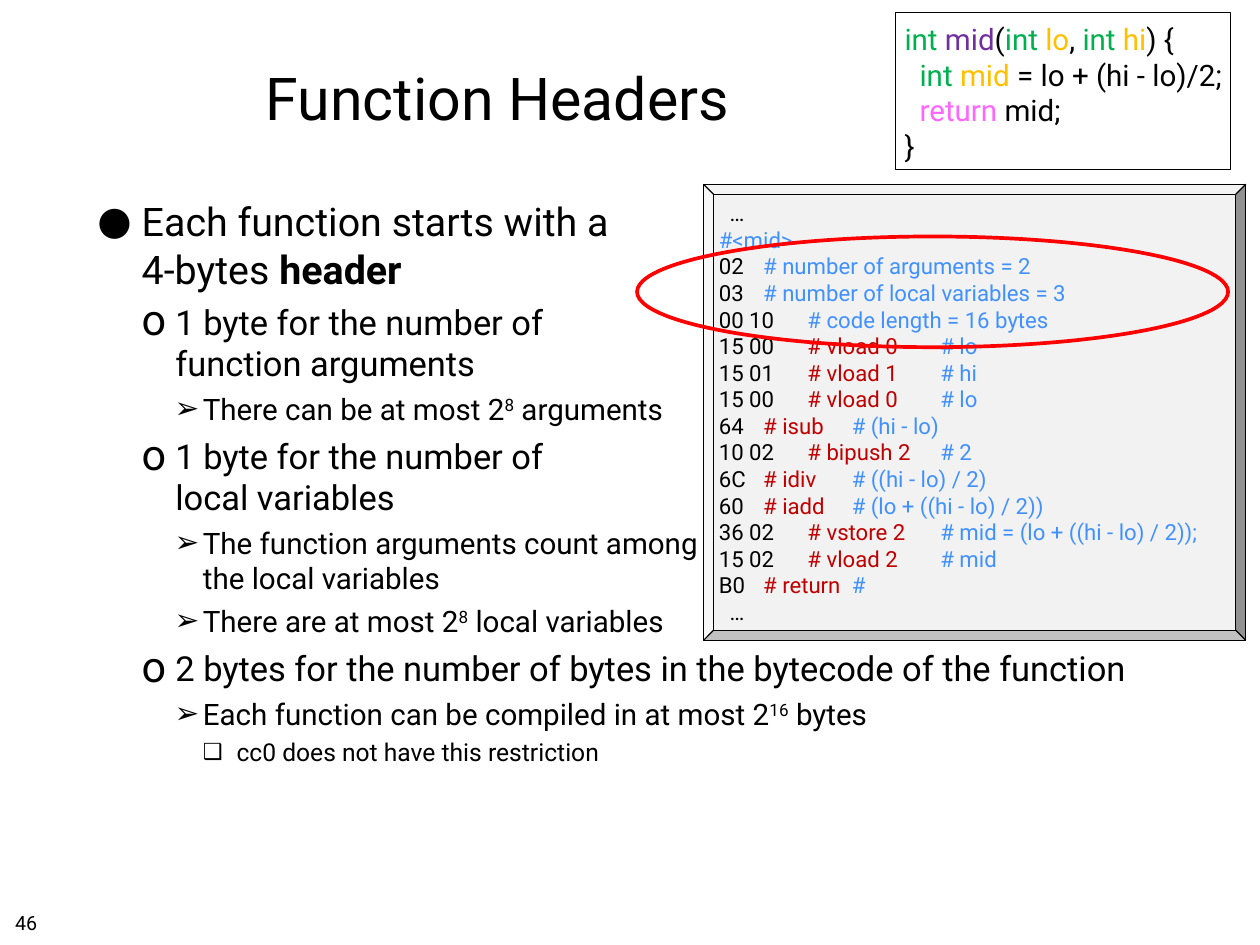
"""Builds the slide on function headers in bytecode."""
from lxml.etree import SubElement
from pptx import Presentation
from pptx.dml.color import RGBColor
from pptx.enum.shapes import MSO_SHAPE as SHAPE
from pptx.enum.text import MSO_ANCHOR as ANCHOR, MSO_AUTO_SIZE as FIT, PP_ALIGN as ALIGN
from pptx.oxml.ns import qn
from pptx.util import Inches, Pt

BLACK = RGBColor(0x00, 0x00, 0x00)
GREY = RGBColor(0xF2, 0xF2, 0xF2)
RED = RGBColor(0xFF, 0x00, 0x00)
BLUE = RGBColor(0x40, 0x91, 0xFF)
MAROON = RGBColor(0xC0, 0x00, 0x00)
GREEN = RGBColor(0x00, 0xB0, 0x50)
PURPLE = RGBColor(0x70, 0x30, 0xA0)
GOLD = RGBColor(0xFF, 0xC0, 0x00)
PINK = RGBColor(0xFF, 0x66, 0xFF)

FONT = "Roboto"
PAD = 0.06
TITLE = "Function Headers"
NUMBER = "46"

# left, hang, space before, size, bullet, bullet percent
LEVELS = [
    (0.5, 0.5, 8, 32, "●", 100),
    (0.88, 0.38, 7, 28, "o", 125),
    (1.19, 0.32, 6, 24, "➢", 100),
    (1.57, 0.38, 4.8, 20, "❑", 90),
]
POINTS = [
    (0, "Each function starts with a\n4-bytes ", "header", ""),
    (1, "1 byte for the number of\nfunction arguments", "", ""),
    (2, "There can be at most 2", "8", " arguments"),
    (1, "1 byte for the number of\nlocal variables", "", ""),
    (2, "The function arguments count among\nthe local variables", "", ""),
    (2, "There are at most 2", "8", " local variables"),
    (1, "2 bytes for the number of bytes in the bytecode of the function", "", ""),
    (2, "Each function can be compiled in at most 2", "16", " bytes"),
    (3, "cc0 does not have this restriction", "", ""),
]
HEADER = [
    ("02", "# number of arguments = 2"),
    ("03", "# number of local variables = 3"),
    ("00 10", "# code length = 16 bytes"),
]
CODE = [
    ("15 00", "# vload 0", "# lo"),
    ("15 01", "# vload 1", "# hi"),
    ("15 00", "# vload 0", "# lo"),
    ("64", "# isub", "# (hi - lo)"),
    ("10 02", "# bipush 2", "# 2"),
    ("6C", "# idiv", "# ((hi - lo) / 2)"),
    ("60", "# iadd", "# (lo + ((hi - lo) / 2))"),
    ("36 02", "# vstore 2", "# mid = (lo + ((hi - lo) / 2));"),
    ("15 02", "# vload 2", "# mid"),
    ("B0", "# return", "#"),
]
SOURCE = [
    (0, [("int ", GREEN), ("mid", PURPLE), ("(", BLACK), ("int ", GREEN), ("lo", GOLD),
         (", ", BLACK), ("int ", GREEN), ("hi", GOLD), (") {", BLACK)]),
    (0.17, [("int ", GREEN), ("mid", GOLD), (" = lo + (hi - lo)/2;", BLACK)]),
    (0.17, [("return ", PINK), ("mid;", BLACK)]),
    (0, [("}", BLACK)]),
]


def set_up(shape, pad=PAD, wrap=True, anchor=ANCHOR.TOP):
    frame = shape.text_frame
    frame.word_wrap = wrap
    frame.vertical_anchor = anchor
    frame.margin_left = frame.margin_top = Inches(pad)
    frame.margin_right = frame.margin_bottom = Inches(PAD)
    return frame


def add_box(slide, place, **style):
    return set_up(slide.shapes.add_textbox(*map(Inches, place)), **style)


def add_form(slide, kind, place, color, width, fill=None):
    shape = slide.shapes.add_shape(kind, *map(Inches, place))
    shape.shadow.inherit = False
    if fill is None:
        shape.fill.background()
    else:
        shape.fill.solid()
        shape.fill.fore_color.rgb = fill
    shape.line.color.rgb = color
    shape.line.width = Pt(width)
    return shape


def add_run(para, text, size, color=BLACK):
    run = para.add_run()
    run.text = text
    run.font.name = FONT
    run.font.size = Pt(size)
    run.font.color.rgb = color
    return run


def add_para(frame, first, align=ALIGN.LEFT):
    para = frame.paragraphs[0] if first else frame.add_paragraph()
    para.alignment = align
    return para


def indent(para, left, hang=0):
    props = para._p.get_or_add_pPr()
    props.set("marL", str(Inches(left)))
    props.set("indent", str(-Inches(hang)))
    return props


def add_point(frame, first, level, lead, accent, tail):
    left, hang, before, size, mark, percent = LEVELS[level]
    para = add_para(frame, first)
    para.space_before = Pt(before)
    props = indent(para, left, hang)
    SubElement(props, qn("a:buSzPct"), val=str(percent * 1000))
    SubElement(props, qn("a:buFont"), typeface=FONT)
    SubElement(props, qn("a:buChar"), char=mark)
    for i, line in enumerate(lead.split("\n")):
        if i:
            para.add_line_break()
        add_run(para, line, size)
    if accent:
        run = add_run(para, accent, size)
        if level == 0:
            run.font.bold = True
        else:
            run._r.get_or_add_rPr().set("baseline", "30000")
    if tail:
        add_run(para, tail, size)


def add_row(frame, first, cells, colors, stops=(), left=0):
    para = add_para(frame, first)
    props = indent(para, left)
    if stops:
        tabs = SubElement(props, qn("a:tabLst"))
        for stop in stops:
            SubElement(tabs, qn("a:tab"), pos=str(Inches(stop)), algn="l")
    last = len(cells) - 1
    for i, (cell, color) in enumerate(zip(cells, colors)):
        add_run(para, cell if i == last else cell + "\t", 18, color)


def add_listing(slide):
    panel = add_form(slide, SHAPE.BEVEL, (7.94, 2.08, 6.12, 5.15), BLACK, 1, GREY)
    panel.adjustments[0] = 0.022
    frame = set_up(panel, wrap=False, anchor=ANCHOR.MIDDLE)
    frame.auto_size = FIT.SHAPE_TO_FIT_TEXT
    add_row(frame, True, ["…"], [BLACK], left=0.12)
    add_row(frame, False, ["#<mid>"], [BLUE])
    for cells in HEADER:
        add_row(frame, False, cells, (BLACK, BLUE), (1.56,))
    for cells in CODE:
        add_row(frame, False, cells, (BLACK, MAROON, BLUE), (1.12, 2.88))
    add_row(frame, False, ["…"], [BLACK], left=0.12)


def add_source(slide):
    panel = add_form(slide, SHAPE.RECTANGLE, (10.11, 0.14, 3.78, 1.77), BLACK, 1)
    frame = set_up(panel, pad=0.1, wrap=False)
    frame.auto_size = FIT.SHAPE_TO_FIT_TEXT
    for i, (left, parts) in enumerate(SOURCE):
        para = add_para(frame, i == 0)
        indent(para, left)
        for text, color in parts:
            add_run(para, text, 24, color)


def main():
    deck = Presentation()
    deck.slide_width, deck.slide_height = Inches(14.22), Inches(10.67)
    slide = deck.slides.add_slide(deck.slide_layouts[6])

    title = add_box(slide, (1.04, 0.28, 9.15, 1.64), anchor=ANCHOR.MIDDLE)
    add_run(add_para(title, True, ALIGN.CENTER), TITLE, 48)
    body = add_box(slide, (1.04, 2.17, 12.14, 7.54))
    for i, point in enumerate(POINTS):
        add_point(body, i == 0, *point)

    add_listing(slide)
    add_source(slide)
    add_form(slide, SHAPE.OVAL, (7.19, 2.67, 6.67, 1.25), RED, 3)
    number = add_box(slide, (0.11, 10.23, 0.37, 0.35), wrap=False)
    add_run(add_para(number, True), NUMBER, 16)
    deck.save("out.pptx")


if __name__ == "__main__":
    main()
